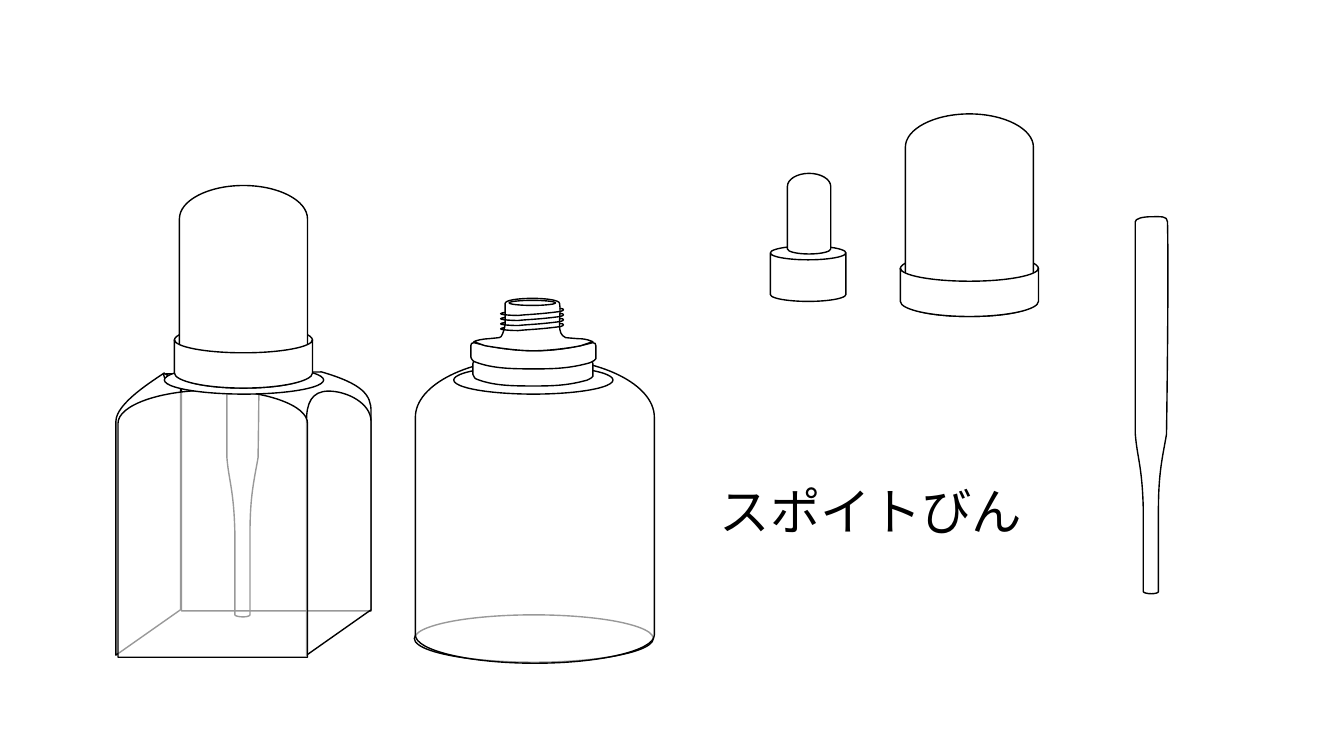
from lxml import etree
from pptx import Presentation
from pptx.dml.color import RGBColor
from pptx.enum.shapes import MSO_SHAPE
from pptx.enum.text import MSO_ANCHOR, MSO_AUTO_SIZE, PP_ALIGN
from pptx.oxml.ns import qn
from pptx.util import Inches, Pt

OVAL, CAN = MSO_SHAPE.OVAL, MSO_SHAPE.CAN
MIDDLE, LEFT, NO_FIT = MSO_ANCHOR.MIDDLE, PP_ALIGN.LEFT, MSO_AUTO_SIZE.NONE
BLACK, WHITE = RGBColor(0, 0, 0), RGBColor(255, 255, 255)
FONT = "Noto Sans CJK JP"
TITLE = "スポイトびん"
ROUND = .55     # pull of the handles in a quarter ellipse
CLEAR, GLASS, SOLID = 0, 60, 100

# Outlines in inches from the part's own corner: M move, L line, C curve
PIPE = """M .16 0 C .25 0 .32 -.01 .32 .05 C .33 .45 .32 1.53 .31 2.16
    C .27 2.39 .23 2.54 .23 2.91 L .23 3.72 C .23 3.73 .2 3.74 .16 3.74
    C .12 3.74 .08 3.73 .08 3.72 L .08 2.91 C .07 2.47 .02 2.4 0 2.15
    L 0 .05 C 0 .02 .07 0 .16 0"""
BACK = """M 2.04 0 C 2.45 .12 2.53 .23 2.53 .39 L 2.53 2.37 L .65 2.37
    L .65 .13 L .49 .02"""
RIGHT_SIDE = """M 2.11 .19 C 2.29 .19 2.53 .31 2.53 .49 L 2.53 2.36
    L 1.89 2.81 L 1.89 .49 C 1.89 .31 1.94 .19 2.11 .19"""
LEFT_SIDE = """M .64 .49 L .64 2.36 L 0 2.81 L 0 .49
    C 0 .31 .38 .08 .48 .01 C .45 .08 .56 .1 .64 .13"""
COLLAR = """M 0 .03 C 0 .01 .01 0 .03 0 C .23 .05 .43 .08 .64 .08
    C .83 .08 1.02 .05 1.21 0 C 1.23 0 1.24 .01 1.24 .03 L 1.24 .16
    C 1.24 .17 1.22 .18 1.18 .2 C 1 .25 .86 .26 .65 .26
    C .42 .26 .22 .26 .04 .19 C .03 .19 0 .16 0 .14"""
NECK = """M .58 0 C .73 0 .85 .02 .85 .05 C .87 .15 .82 .31 .88 .37
    L .91 .39 L 1.03 .4 C 1.12 .4 1.15 .42 1.18 .43 L 1.06 .47
    C .97 .49 .75 .52 .59 .52 C .43 .52 .23 .49 .11 .47 L 0 .43
    C .01 .42 .1 .4 .15 .4 L .25 .39 L .27 .38 C .29 .35 .3 .31 .31 .26
    L .31 .05 C .31 .02 .43 0 .58 0"""
THREAD = """M .59 0 C .64 0 .64 .02 .6 .03 C .38 .06 .26 .06 .18 .07
    C .11 .07 -.08 .06 .05 .04"""


def trace(text):
    """Turn an outline into steps: one point for a move or line, three for a curve."""
    words = iter(text.split())
    return [[(float(next(words)), float(next(words)))
             for _ in range(3 if letter == "C" else 1)] for letter in words]


def bow(start, end, level, sag):
    """Half an ellipse as two curves; a negative sag bulges upward."""
    mid, half = (start + end) / 2, (end - start) / 2
    peak, pull = level + sag, level + sag * ROUND
    return [[(start, pull), (mid - half * ROUND, peak), (mid, peak)],
            [(mid + half * ROUND, peak), (end, pull), (end, level)]]


def tub(width, top, sag, base, lip):
    """Upright sides between a bowed top and a bowed base."""
    return ([[(0, top)]] + bow(0, width, top, sag)
            + [[(width, base)]] + bow(width, 0, base, lip))


def dome(width, height, crown, lip):
    return tub(width, crown, -crown, height - lip, lip)


def ink(shape, fill):
    shape.shadow.inherit = False
    shape.line.color.rgb = BLACK
    shape.line.width = Pt(1)
    if fill == CLEAR:
        shape.fill.background()
        return
    shape.fill.solid()
    shape.fill.fore_color.rgb = WHITE
    if fill < SOLID:
        color = shape._element.spPr.find(qn("a:solidFill")).find(qn("a:srgbClr"))
        etree.SubElement(color, qn("a:alpha")).set("val", str(fill * 1000))


def draw(home, steps, left, top, fill=SOLID, scale=1, close=True):
    spots = [(Inches(left + x * scale), Inches(top + y * scale))
             for step in steps for x, y in step]
    pen = home.build_freeform(*spots[0], scale=1.0)
    pen.add_line_segments(spots[1:], close=close)
    shape = pen.convert_to_shape()
    lines = iter(list(shape._element.iter(qn("a:lnTo"))))
    for step in steps[1:]:
        first, *rest = [next(lines) for _ in step]
        if rest:
            first.tag = qn("a:cubicBezTo")
            for line in rest:
                first.append(line[0])
                line.getparent().remove(line)
    ink(shape, fill)


def preset(home, kind, *box):
    ink(home.add_shape(kind, *map(Inches, box)), SOLID)


def cap(shapes, left, top):
    home = shapes.add_group_shape().shapes
    preset(home, OVAL, left, top + 1.39, 1.37, .29)
    draw(home, dome(1.27, 2.01, .33, .13), left + .05, top)
    draw(home, tub(1.37, 0, .13, .33, .15), left, top + 1.53)


def ring(home, left):
    preset(home, OVAL, left, 3.63, 1.58, .28)


def square_bottle(shapes):
    home = shapes.add_group_shape().shapes
    for side, fill in ((BACK, CLEAR), (RIGHT_SIDE, GLASS), (LEFT_SIDE, CLEAR)):
        draw(home, trace(side), 1.15, 3.69, fill)
    draw(home, dome(1.88, 2.65, .33, 0), 1.17, 3.87, GLASS)
    ring(home, 1.63)


def round_bottle(shapes):
    home = shapes.add_group_shape().shapes
    preset(home, OVAL, 4.11, 6.1, 2.37, .47)
    draw(home, dome(2.37, 3.03, .59, .28), 4.12, 3.55, GLASS)
    ring(home, 4.5)
    collar = trace(COLLAR)
    draw(home, collar, 4.69, 3.58, scale=.96)
    draw(home, collar, 4.67, 3.4)
    draw(home, trace(NECK), 4.7, 2.96)
    preset(home, OVAL, 5.05, 2.98, .46, .05)
    for turn in range(4):
        draw(home, trace(THREAD), 4.96, 3.06 + turn * .05, CLEAR, close=False)


def rubber(shapes):
    home = shapes.add_group_shape().shapes
    preset(home, CAN, 7.64, 2.44, .75, .55)
    draw(home, dome(.43, .8, .13, .05), 7.81, 1.72)


def write_title(title):
    title.left, title.top, title.width, title.height = map(
        Inches, (7.04, 4.38, 4.34, 1.45))
    frame = title.text_frame
    frame.text = TITLE
    frame.word_wrap = True
    frame.auto_size = NO_FIT
    frame.vertical_anchor = MIDDLE
    line = frame.paragraphs[0]
    line.alignment = LEFT
    line.line_spacing = .9
    run = line.runs[0]
    run.font.size = Pt(36)
    run.font.name = FONT
    run.font.color.rgb = BLACK
    east = etree.SubElement(run._r.get_or_add_rPr(), qn("a:ea"))
    east.set("typeface", FONT)


def main():
    deck = Presentation()
    deck.slide_width, deck.slide_height = Inches(13.33), Inches(7.5)
    shapes = deck.slides.add_slide(deck.slide_layouts[5]).shapes
    write_title(shapes.title)
    pipe = trace(PIPE)
    draw(shapes, pipe, 2.25, 2.38)
    square_bottle(shapes)
    round_bottle(shapes)
    cap(shapes, 1.73, 1.84)
    cap(shapes, 8.93, 1.13)
    rubber(shapes)
    draw(shapes, pipe, 11.26, 2.15)
    deck.save("out.pptx")


if __name__ == "__main__":
    main()
